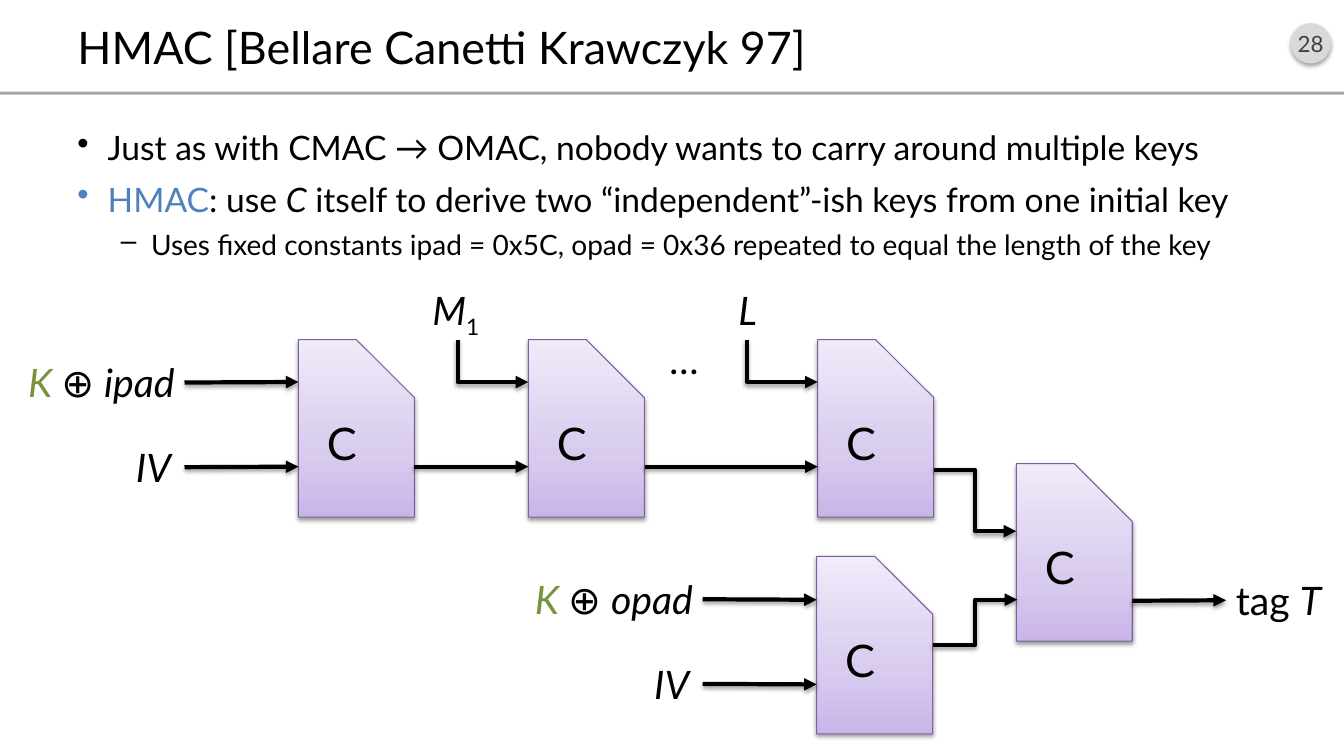
"""Build the HMAC slide: title, bullets and the diagram of chained compression functions."""
import copy
from dataclasses import dataclass
from typing import NamedTuple, Optional

import pptx
import pptx.dml.color
import pptx.enum.shapes
import pptx.enum.text
import pptx.oxml
import pptx.oxml.ns
import pptx.util

Inches = pptx.util.Inches
Pt = pptx.util.Pt
qn = pptx.oxml.ns.qn
ALIGN = pptx.enum.text.PP_ALIGN
SHAPE = pptx.enum.shapes.MSO_SHAPE
CONNECTOR = pptx.enum.shapes.MSO_CONNECTOR
MIDDLE = pptx.enum.text.MSO_ANCHOR.MIDDLE

FONT = "Lato"
BLACK, GREEN, BLUE = "000000", "77933C", "4F81BD"
BOTTOM, LEFT, RIGHT = 2, 1, 3
BLOCK_WIDTH, BLOCK_HEIGHT = 1.15, 1.76
LABEL_HEIGHT = 0.57
KEY_Y, CHAIN_Y = 3.79, 4.63
OUTER_KEY_Y, OUTER_IV_Y = 5.95, 6.79
LILAC = ((0, "C9B5E8"), (0.35, "D8CBEE"), (1, "F0EAF9"))


class Span(NamedTuple):
    text: str
    italic: bool = False
    color: str = BLACK
    subscript: bool = False


class Bullet(NamedTuple):
    spans: tuple[Span, ...]
    sign: str = "•"
    size: int = 24
    level: int = 0
    margin: float = 0.3
    before: int = 8


@dataclass
class Label:
    left: float
    top: float
    width: float
    spans: tuple[Span, ...]
    align: ALIGN = ALIGN.LEFT
    wrap: bool = False


@dataclass
class Arrow:
    start: tuple[float, float]
    end: tuple[float, float]
    kind: str = "line"
    source: Optional[tuple[str, int]] = None
    target: Optional[tuple[str, int]] = None


BULLETS = (
    Bullet((Span("Just as with CMAC → OMAC, nobody wants to carry around multiple keys"),)),
    Bullet((Span("HMAC", color=BLUE), Span(": use "), Span("C", True),
            Span(" itself to derive two “independent”-ish keys from one initial key"))),
    Bullet((Span("Uses fixed constants ipad = 0x5C, opad = 0x36 repeated to equal the length of the key"),),
           "–", 20, 1, 0.73, 6),
)
BLOCKS = {"first": (2.96, 3.37), "second": (5.24, 3.37), "last": (8.11, 3.37),
          "final": (10.08, 4.6), "outer": (8.1, 5.52)}


def masked_key(pad: str) -> tuple[Span, ...]:
    return Span("K ", True, GREEN), Span("⊕ "), Span(pad, True)


LABELS = {
    "inner iv": Label(1.25, 4.35, 0.58, (Span("IV", True),)),
    "inner key": Label(0.09, 3.51, 1.74, masked_key("ipad"), ALIGN.RIGHT),
    "message": Label(4.19, 2.79, 0.71, (Span("M", True), Span("1", subscript=True)), wrap=True),
    "length": Label(7.06, 2.79, 0.71, (Span("L", True),), ALIGN.CENTER, True),
    "more": Label(6.55, 3.28, 0.71, (Span("…", True),), wrap=True),
    "tag": Label(12.16, 5.67, 1.08, (Span("tag "), Span("T", True))),
    "outer iv": Label(6.39, 6.5, 0.58, (Span("IV", True),)),
    "outer key": Label(5.11, 5.66, 1.86, masked_key("opad"), ALIGN.RIGHT),
}
ARROWS = (
    Arrow((1.83, KEY_Y), (2.96, KEY_Y), source=("inner key", RIGHT)),
    Arrow((1.83, CHAIN_Y), (2.96, CHAIN_Y), source=("inner iv", RIGHT)),
    Arrow((4.11, CHAIN_Y), (5.24, CHAIN_Y)),
    Arrow((6.4, CHAIN_Y), (8.11, CHAIN_Y)),
    Arrow((4.54, 3.37), (5.24, KEY_Y), "corner", ("message", BOTTOM)),
    Arrow((7.41, 3.37), (8.11, KEY_Y), "corner", ("length", BOTTOM)),
    Arrow((6.97, OUTER_KEY_Y), (8.1, OUTER_KEY_Y), source=("outer key", RIGHT)),
    Arrow((6.97, OUTER_IV_Y), (8.1, OUTER_IV_Y), source=("outer iv", RIGHT)),
    Arrow((9.26, 4.66), (10.08, 5.27), "step"),
    Arrow((9.25, 6.4), (10.09, OUTER_KEY_Y), "step", ("outer", RIGHT)),
    Arrow((11.23, 5.96), (12.16, 5.96), target=("tag", LEFT)),
)


def rgb(value: str) -> pptx.dml.color.RGBColor:
    return pptx.dml.color.RGBColor.from_string(value)


def box(left: float, top: float, width: float, height: float) -> tuple:
    return Inches(left), Inches(top), Inches(width), Inches(height)


def write(paragraph, spans: tuple[Span, ...], size: int, align=ALIGN.LEFT) -> None:
    paragraph.alignment = align
    for span in spans:
        run = paragraph.add_run()
        run.text = span.text
        run.font.name = FONT
        run.font.size = Pt(size)
        run.font.italic = span.italic
        run.font.color.rgb = rgb(span.color)
        if span.subscript:
            run.font._element.set("baseline", "-25000")


def cast_shadow(element, opacity: int) -> None:
    properties = element.spPr
    for effects in properties.findall(qn("a:effectLst")):
        properties.remove(effects)
    properties.append(pptx.oxml.parse_xml(
        '<a:effectLst xmlns:a="http://schemas.openxmlformats.org/drawingml/2006/main">'
        '<a:outerShdw blurRad="39370" dist="21590" dir="5400000" rotWithShape="0">'
        f'<a:srgbClr val="000000"><a:alpha val="{opacity * 1000}"/></a:srgbClr>'
        '</a:outerShdw></a:effectLst>'))


def draw_flat(slide, kind: SHAPE, place: tuple, color: str):
    shape = slide.shapes.add_shape(kind, *place)
    shape.shadow.inherit = False
    shape.fill.solid()
    shape.fill.fore_color.rgb = rgb(color)
    shape.line.fill.background()
    return shape


def draw_header(slide) -> None:
    badge = draw_flat(slide, SHAPE.OVAL, box(12.8, 0.23, 0.4, 0.4), "D9D9D9")
    cast_shadow(badge._element, 35)
    badge.text_frame.margin_left = badge.text_frame.margin_right = 0
    badge.text_frame.vertical_anchor = MIDDLE
    write(badge.text_frame.paragraphs[0], (Span("28", color="404040"),), 16, ALIGN.CENTER)
    draw_flat(slide, SHAPE.RECTANGLE, box(0, 0.91, 13.33, 0.03), "A6A6A6")
    title = slide.shapes.add_textbox(*box(0.67, 0.16, 12, 0.6)).text_frame
    title.word_wrap = True
    title.vertical_anchor = MIDDLE
    write(title.paragraphs[0], (Span("HMAC [Bellare Canetti Krawczyk 97]"),), 32)


def draw_bullets(slide) -> None:
    body = slide.shapes.add_textbox(*box(0.67, 1.21, 12, 5.75)).text_frame
    body.word_wrap = True
    for index, bullet in enumerate(BULLETS):
        paragraph = body.add_paragraph() if index else body.paragraphs[0]
        write(paragraph, bullet.spans, bullet.size)
        paragraph.level = bullet.level
        paragraph.space_before = Pt(bullet.before)
        settings = paragraph._p.get_or_add_pPr()
        settings.set("marL", str(Inches(bullet.margin)))
        settings.set("indent", str(Inches(-0.3)))
        settings.append(settings.makeelement(qn("a:buChar"), {"char": bullet.sign}))


def draw_block(slide, left: float, top: float):
    block = slide.shapes.add_shape(SHAPE.SNIP_1_RECTANGLE, *box(left, top, BLOCK_WIDTH, BLOCK_HEIGHT))
    block.adjustments[0] = 0.5
    block.fill.gradient()
    block.fill.gradient_angle = 90
    stops = block._element.spPr.find(".//" + qn("a:gsLst"))
    stops.append(copy.deepcopy(stops[0]))
    for stop, (position, color) in zip(block.fill.gradient_stops, LILAC):
        stop.position = position
        stop.color.rgb = rgb(color)
    block.line.color.rgb = rgb("7D60A0")
    block.line.width = Pt(0.75)
    cast_shadow(block._element, 38)
    block.text_frame.vertical_anchor = MIDDLE
    write(block.text_frame.paragraphs[0], (Span("C"),), 32, ALIGN.CENTER)
    return block


def draw_label(slide, label: Label):
    caption = slide.shapes.add_textbox(*box(label.left, label.top, label.width, LABEL_HEIGHT))
    caption.text_frame.word_wrap = label.wrap
    caption.text_frame.auto_size = pptx.enum.text.MSO_AUTO_SIZE.SHAPE_TO_FIT_TEXT
    write(caption.text_frame.paragraphs[0], label.spans, 28, label.align)
    return caption


def draw_arrow(slide, arrow: Arrow, parts: dict) -> None:
    kind = CONNECTOR.STRAIGHT if arrow.kind == "line" else CONNECTOR.ELBOW
    link = slide.shapes.add_connector(kind, *map(Inches, arrow.start + arrow.end))
    if arrow.source:
        link.begin_connect(parts[arrow.source[0]], arrow.source[1])
    if arrow.target:
        link.end_connect(parts[arrow.target[0]], arrow.target[1])
    properties = link._element.spPr
    if arrow.kind == "corner":
        (x1, y1), (x2, y2) = arrow.start, arrow.end
        run, drop = x2 - x1, y2 - y1
        link.left, link.top, link.width, link.height = box(
            (x1 + x2 - drop) / 2, (y1 + y2 - run) / 2, drop, run)
        properties.xfrm.set("rot", "16200000")
        properties.xfrm.set("flipH", "1")
        properties.find(qn("a:prstGeom")).set("prst", "bentConnector2")
    link.line.color.rgb = rgb(BLACK)
    link.line.width = Pt(3)
    stroke = properties.find(qn("a:ln"))
    stroke.append(stroke.makeelement(qn("a:tailEnd"), {"type": "triangle"}))
    cast_shadow(link._element, 38)


def main() -> None:
    deck = pptx.Presentation()
    deck.slide_width, deck.slide_height = Inches(13.33), Inches(7.5)
    slide = deck.slides.add_slide(deck.slide_layouts[6])
    draw_header(slide)
    draw_bullets(slide)
    parts = {name: draw_block(slide, *corner) for name, corner in BLOCKS.items()}
    parts.update({name: draw_label(slide, label) for name, label in LABELS.items()})
    for arrow in ARROWS:
        draw_arrow(slide, arrow, parts)
    deck.save("out.pptx")


if __name__ == "__main__":
    main()
